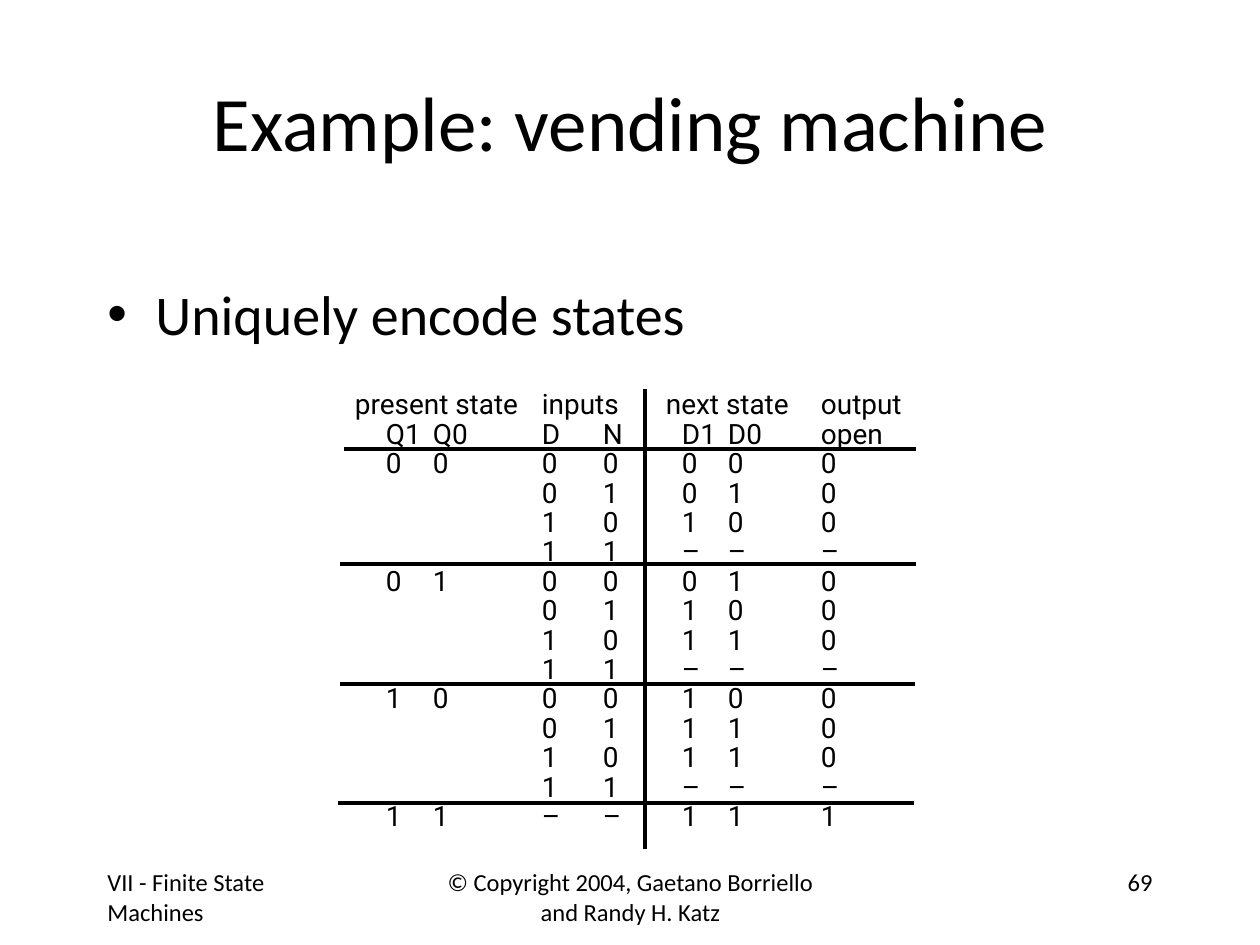
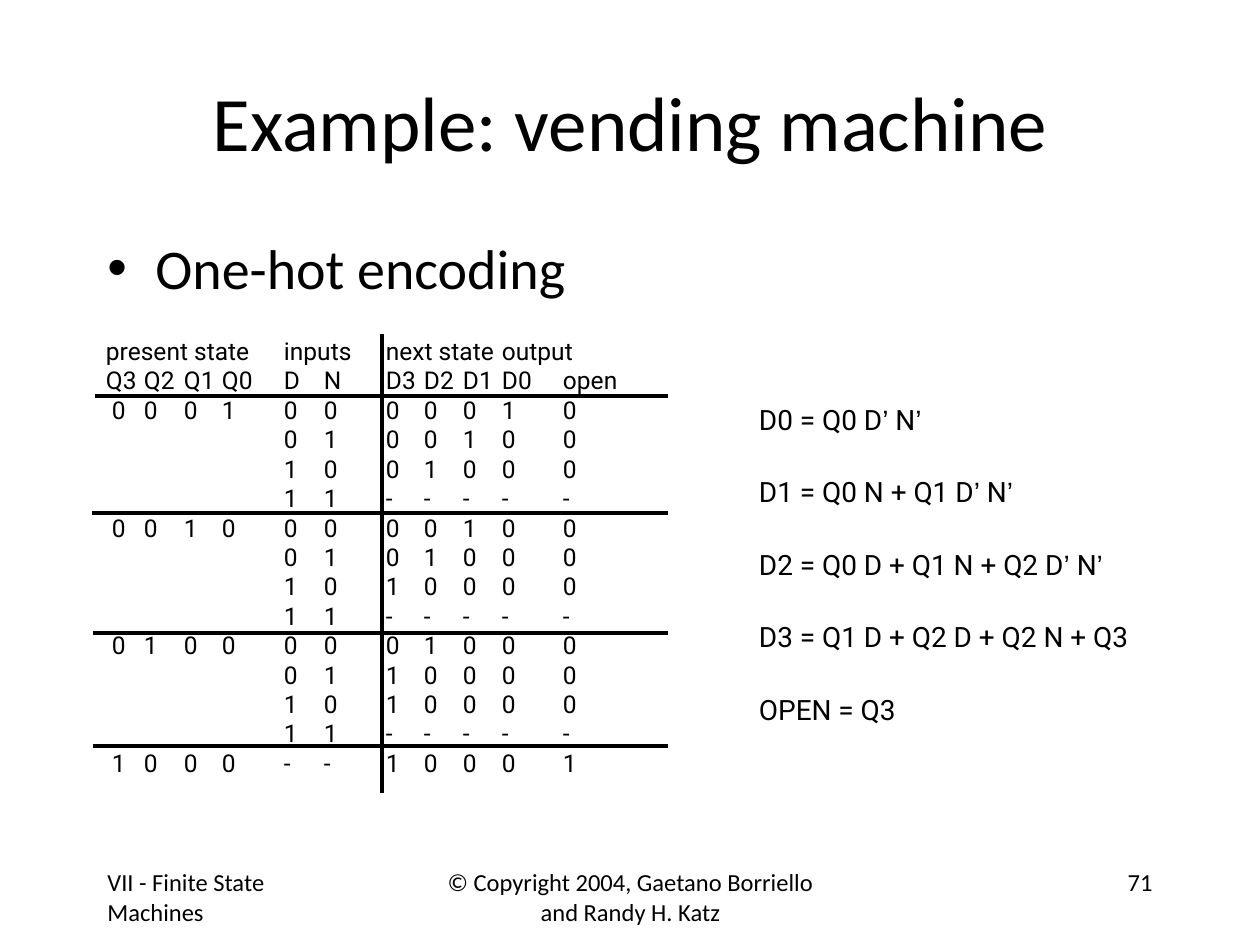
import pptx
import pptx.dml.color
import pptx.enum.shapes
import pptx.enum.text
import pptx.oxml.ns
import pptx.util
from lxml import etree

PX = 914400 / 126
ALIGN = pptx.enum.text.PP_ALIGN
MIDDLE = pptx.enum.text.MSO_ANCHOR.MIDDLE
INK = "000000"
BODY_FONT = "Calibri"
TABLE_FONT = "Roboto"
QUOTE_FONT = "Arial"


def emu(px):
    return pptx.util.Emu(round(px * PX))


def color(hex_string):
    return pptx.dml.color.RGBColor.from_string(hex_string)


def add_child(parent, tag, **attributes):
    child = etree.SubElement(parent, pptx.oxml.ns.qn(tag))
    for name, value in attributes.items():
        child.set(name, str(value))
    return child


def write(paragraph, text, size=14, font=BODY_FONT, align=ALIGN.LEFT,
          line_spacing=None, space_after=None, tabs=(), bullet_indent=0):
    """Fill one paragraph; apostrophes outside the body font use QUOTE_FONT."""
    paragraph.alignment = align
    if line_spacing:
        paragraph.line_spacing = pptx.util.Pt(line_spacing)
    if space_after:
        paragraph.space_after = pptx.util.Pt(space_after)
    properties = paragraph._p.get_or_add_pPr()
    if bullet_indent:
        properties.set("marL", str(emu(bullet_indent)))
        properties.set("indent", str(-emu(bullet_indent)))
        add_child(properties, "a:buFont", typeface="Arial")
        add_child(properties, "a:buChar", char="•")
    if tabs:
        tab_list = add_child(properties, "a:tabLst")
        for tab in tabs:
            add_child(tab_list, "a:tab", pos=emu(tab), algn="l")
    for piece in text.replace("’", "|’|").split("|"):
        if piece:
            run = paragraph.add_run()
            run.text = piece
            run.font.name = QUOTE_FONT if piece == "’" else font
            run.font.size = pptx.util.Pt(size)
            run.font.color.rgb = color(INK)


class Deck:
    def __init__(self):
        self.presentation = pptx.Presentation()
        self.presentation.slide_width = emu(1260)
        self.presentation.slide_height = emu(945)
        self.slide = None

    def text(self, left, top, width, height, lines, anchor=None, insets=None, **style):
        shape = self.slide.shapes.add_textbox(emu(left), emu(top), emu(width), emu(height))
        frame = shape.text_frame
        frame.word_wrap = True
        if anchor is not None:
            frame.vertical_anchor = anchor
        if insets:
            frame.margin_left = frame.margin_right = emu(insets[0])
            frame.margin_top = frame.margin_bottom = emu(insets[1])
        for index, line in enumerate(lines):
            paragraph = frame.add_paragraph() if index else frame.paragraphs[0]
            write(paragraph, line, **style)

    def line(self, x1, y1, x2, y2):
        connector = self.slide.shapes.add_connector(
            pptx.enum.shapes.MSO_CONNECTOR.STRAIGHT, emu(x1), emu(y1), emu(x2), emu(y2))
        connector.line.color.rgb = color(INK)
        connector.line.width = pptx.util.Pt(2)
        add_child(connector._element.spPr, "a:effectLst")

    def start_slide(self, number, bullet, bullet_top):
        self.slide = self.presentation.slides.add_slide(self.presentation.slide_layouts[6])
        # Footer
        self.text(95, 861, 262, 63, ["VII - Finite State Machines"])
        self.text(431, 861, 399, 63, ["© Copyright 2004, Gaetano Borriello and Randy H. Katz"],
                  align=ALIGN.CENTER)
        self.text(903, 861, 262, 63, [str(number)], align=ALIGN.RIGHT)
        # Title and bullet
        self.text(95, 42, 1071, 158, ["Example: vending machine"], anchor=MIDDLE,
                  size=44, align=ALIGN.CENTER)
        self.text(95, bullet_top, 1071, 80, [bullet], size=32, bullet_indent=48)

    def truth_table(self, left, top, headings, rows, tabs, size):
        """Each character of a row is one cell; a dot is an empty cell."""
        lines = ["\t" + "\t".join(row).replace(".", "") for row in rows]
        self.text(left, top, 563, 510, headings + lines, insets=(3, 4), size=size,
                  font=TABLE_FONT, line_spacing=16.8, tabs=tabs)

    def rules(self, horizontals, divider):
        for x1, x2, y in horizontals:
            self.line(x1, y, x2, y)
        x, y1, y2 = divider
        self.line(x, y1, x, y2)


def main():
    deck = Deck()

    # Encoded states
    deck.start_slide(69, "Uniquely encode states", 273)
    deck.truth_table(
        352, 387,
        ["present state\tinputs\tnext state\toutput", "\tQ1\tQ0\tD\tN\t\tD1\tD0\topen"],
        ["0000.000", "..01.010", "..10.100", "..11.–––",
         "0100.010", "..01.100", "..10.110", "..11.–––",
         "1000.100", "..01.110", "..10.110", "..11.–––",
         "11––.111"],
        tabs=(31, 78, 187, 248, 311, 327, 373, 466), size=16)
    deck.rules([(344, 916, 449), (340, 916, 564), (340, 915, 684), (338, 914, 803)],
               divider=(645, 389, 849))

    # One-hot states
    deck.start_slide(71, "One-hot encoding", 227)
    deck.truth_table(
        103, 332,
        ["present state\tinputs\tnext state\toutput",
         "Q3\tQ2\tQ1\tQ0\tD\tN\tD3\tD2\tD1\tD0\topen"],
        ["00010000010", "....0100100", "....1001000", "....11-----",
         "00100000100", "....0101000", "....1010000", "....11-----",
         "01000001000", "....0110000", "....1010000", "....11-----",
         "1000--10001"],
        tabs=(6, 38, 78, 116, 178, 218, 280, 318, 357, 396, 457), size=14)
    deck.rules([(95, 668, 396), (92, 668, 513), (93, 668, 633), (93, 668, 746)],
               divider=(382, 334, 793))

    # Next-state equations
    deck.text(756, 394, 436, 381,
              ["D0 = Q0 D’ N’", "D1 = Q0 N + Q1 D’ N’", "D2 = Q0 D + Q1 N + Q2 D’ N’",
               "D3 = Q1 D + Q2 D + Q2 N + Q3", "OPEN = Q3"],
              insets=(3, 4), size=16, font=TABLE_FONT, line_spacing=21.7, space_after=19.7)

    deck.presentation.save("out.pptx")


if __name__ == "__main__":
    main()
